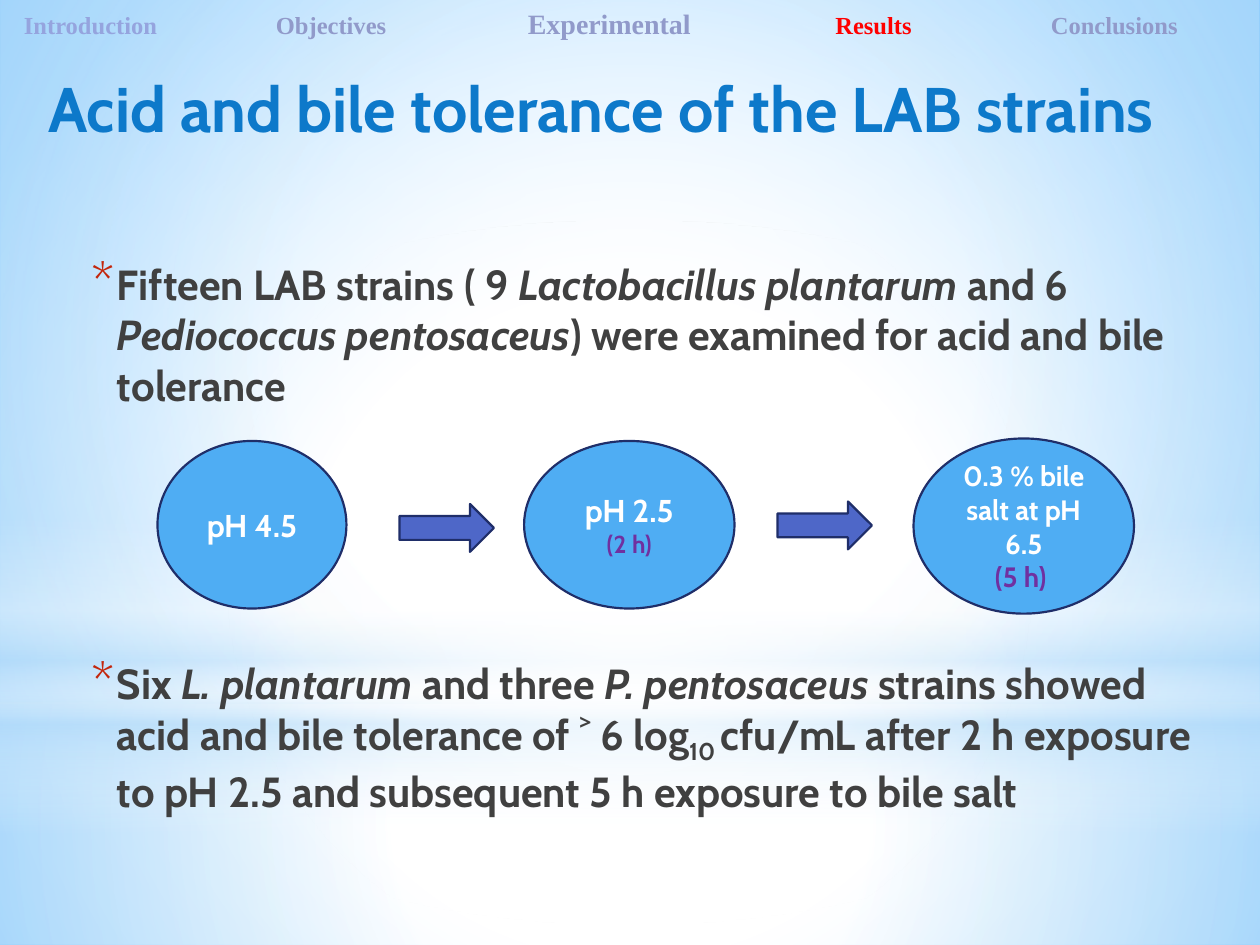
from pptx import Presentation
from pptx.dml.color import RGBColor
from pptx.enum.shapes import MSO_SHAPE
from pptx.enum.text import MSO_ANCHOR, PP_ALIGN
from pptx.oxml import parse_xml
from pptx.oxml.ns import nsdecls, qn
from pptx.util import Inches, Pt

RECT, OVAL, ARROW = MSO_SHAPE.RECTANGLE, MSO_SHAPE.OVAL, MSO_SHAPE.RIGHT_ARROW
CENTER, LEFT = PP_ALIGN.CENTER, PP_ALIGN.LEFT
TOP, MIDDLE = MSO_ANCHOR.TOP, MSO_ANCHOR.MIDDLE
SANS, SERIF = "Cabin", "Times New Roman"
C = {"title": "0D79CA", "body": "404040", "star": "C3260C", "oval": "4FADF3",
     "arrow": "4E67C8", "edge": "1F2E69", "white": "FFFFFF", "time": "7030A0",
     "first": "95A4DE", "nav": "919ACA", "here": "FF0000",
     "sky": "63BCFF", "pale": "B4DCFA"}


def make_grad(stops, to=None):
    """Radial fill around the box `to`, or a downward one without it."""
    marks = "".join(
        f'<a:gs pos="{pos * 1000}"><a:srgbClr val="{C[name]}">'
        f'<a:alpha val="{alpha * 1000}"/></a:srgbClr></a:gs>'
        for pos, name, alpha in stops)
    way = '<a:lin ang="5400000" scaled="0"/>'
    if to:
        sides = " ".join(f'{s}="{v * 1000}"' for s, v in zip("ltrb", to))
        way = f'<a:path path="circle"><a:fillToRect {sides}/></a:path>'
    return parse_xml(f'<a:gradFill {nsdecls("a")} rotWithShape="1">'
                     f'<a:gsLst>{marks}</a:gsLst>{way}</a:gradFill>')


def add_run(para, text, size, color, font=SANS, italic=False, base=0):
    run = para.add_run()
    run.text = text
    run.font.size, run.font.name = Pt(size), font
    run.font.bold, run.font.italic = True, italic
    run.font.color.rgb = RGBColor.from_string(C[color])
    if base:
        run.font._element.set("baseline", str(base * 1000))


def add_shape(slide, kind, box, fill=None):
    shape = slide.shapes.add_shape(kind, *map(Inches, box))
    shape.shadow.inherit = False
    if fill:
        shape.fill.solid()
        shape.fill.fore_color.rgb = RGBColor.from_string(C[fill])
        shape.line.color.rgb = RGBColor.from_string(C["edge"])
        shape.line.width = Pt(1.25)
    return shape


def add_text(slide, box):
    frame = slide.shapes.add_textbox(*map(Inches, box)).text_frame
    frame.word_wrap = True
    return frame


def draw_back(slide):
    slide.background.fill.solid()
    back = slide._element.cSld.bg.bgPr
    back.replace(back[0], make_grad(
        [(0, "white", 100), (42, "white", 100), (100, "sky", 100)],
        (24, 44, 24, 12)))
    mid = (50, 50, 50, 50)
    glows = [
        (RECT, (0, 5.58, 10, 1.92), mid,
         [(0, "white", 91), (37, "white", 76), (100, "pale", 79)]),
        (RECT, (0, 0, 10, 5.58), mid,
         [(0, "white", 89), (48, "white", 62), (100, "pale", 79)]),
        (RECT, (0, 4.12, 10, 2.5), None,
         [(0, "white", 0), (29, "white", 30), (45, "pale", 40),
          (55, "white", 26), (65, "pale", 60), (100, "white", 0)]),
        (OVAL, (0, 1.75, 10, 5.58), mid,
         [(0, "white", 100), (56, "white", 0)]),
    ]
    for kind, box, to, stops in glows:
        shape = add_shape(slide, kind, box)
        shape.line.fill.background()
        shape.fill.background()
        props = shape._element.spPr
        props.replace(props.find(qn("a:noFill")), make_grad(stops, to))


def draw_title(slide, box, text):
    title = slide.shapes.title
    title.left, title.top, title.width, title.height = map(Inches, box)
    frame = title.text_frame
    frame.word_wrap, frame.vertical_anchor = True, TOP
    para = frame.paragraphs[0]
    para.alignment = CENTER
    add_run(para, text, 36, "title")
    # Bring the title in front of the backdrop
    slide.shapes._spTree.append(title._element)


def draw_nav(slide, box, items):
    frame = add_text(slide, box)
    frame.margin_left = Inches(0.19)
    para = frame.paragraphs[0]
    para.alignment = LEFT
    stops = "".join(f'<a:tab pos="{Inches(x)}" algn="l"/>'
                    for x, *_ in items if x)
    para._p.get_or_add_pPr().append(
        parse_xml(f'<a:tabLst {nsdecls("a")}>{stops}</a:tabLst>'))
    for x, text, size, color in items:
        add_run(para, "\t" + text if x else text, size, color, SERIF)


def draw_point(slide, box, parts):
    para = add_text(slide, box).paragraphs[0]
    para.space_before, para.space_after = Pt(5), Pt(3)
    props = para._p.get_or_add_pPr()
    props.set("marL", str(Inches(0.25)))
    props.set("indent", str(Inches(-0.2)))
    for tag in (f'buClr {nsdecls("a")}><a:srgbClr val="{C["star"]}"/></a:buClr',
                f'buSzPct {nsdecls("a")} val="130000"/',
                f'buFont {nsdecls("a")} typeface="{SANS}"/',
                f'buChar {nsdecls("a")} char="*"/'):
        props.append(parse_xml(f"<a:{tag}>"))
    for text, style in parts:
        add_run(para, text, 24, "body", **style)


def draw_flow(slide, left, top, steps, arrows):
    for x, y, wide, high, lines in steps:
        shape = add_shape(slide, OVAL, (left + x, top + y, wide, high), "oval")
        frame = shape.text_frame
        frame.word_wrap, frame.vertical_anchor = True, MIDDLE
        for i, (text, size, color) in enumerate(lines):
            para = frame.add_paragraph() if i else frame.paragraphs[0]
            para.alignment = CENTER
            add_run(para, text, size, color)
    for x, y in arrows:
        add_shape(slide, ARROW, (left + x, top + y, 0.75, 0.38), "arrow")


def main():
    prs = Presentation()
    prs.slide_width, prs.slide_height = Inches(10), Inches(7.5)
    slide = prs.slides.add_slide(prs.slide_layouts[5])
    plain, slant, low = {}, {"italic": True}, {"base": -25}

    draw_back(slide)
    draw_title(slide, (0.02, 0.5, 9.5, 1.31),
               "Acid and bile tolerance of the LAB strains")

    # Acid and bile exposure steps
    draw_flow(slide, 1.25, 3.48, [
        (0, 0.02, 1.5, 1.33, [("pH 4.5", 18, "white")]),
        (2.91, 0.02, 1.67, 1.33, [("pH 2.5", 18, "white"),
                                  ("(2 h)", 14, "time")]),
        (6, 0, 1.75, 1.39, [("0.3 % bile salt at pH 6.5", 16, "white"),
                            ("(5 h) ", 16, "time")]),
    ], [(1.92, 0.52), (4.92, 0.5)])

    # Findings
    draw_point(slide, (0.58, 2, 9.08, 1.31), [
        ("Fifteen LAB strains ( 9 ", plain),
        ("Lactobacillus plantarum ", slant),
        ("and 6 ", plain),
        ("Pediococcus pentosaceus", slant),
        (") were examined for acid and bile tolerance", plain)])
    draw_point(slide, (0.58, 5.17, 9.25, 1.72), [
        ("Six ", plain),
        ("L. plantarum", slant),
        (" and three ", plain),
        ("P. pentosaceus", slant),
        (" strains showed acid and bile tolerance of ˃ 6 log", plain),
        ("10 ", low),
        ("cfu/mL after 2 h exposure to pH 2.5 and subsequent "
         "5 h exposure to bile salt", plain)])

    # Section bar
    draw_nav(slide, (0, 0, 10, 0.37), [
        (0, "Introduction", 14, "first"),
        (2, "Objectives", 14, "nav"),
        (4, "Experimental", 16, "nav"),
        (6.44, "Results", 14, "here"),
        (8.15, "Conclusions", 14, "nav")])
    prs.save("out.pptx")


if __name__ == "__main__":
    main()
